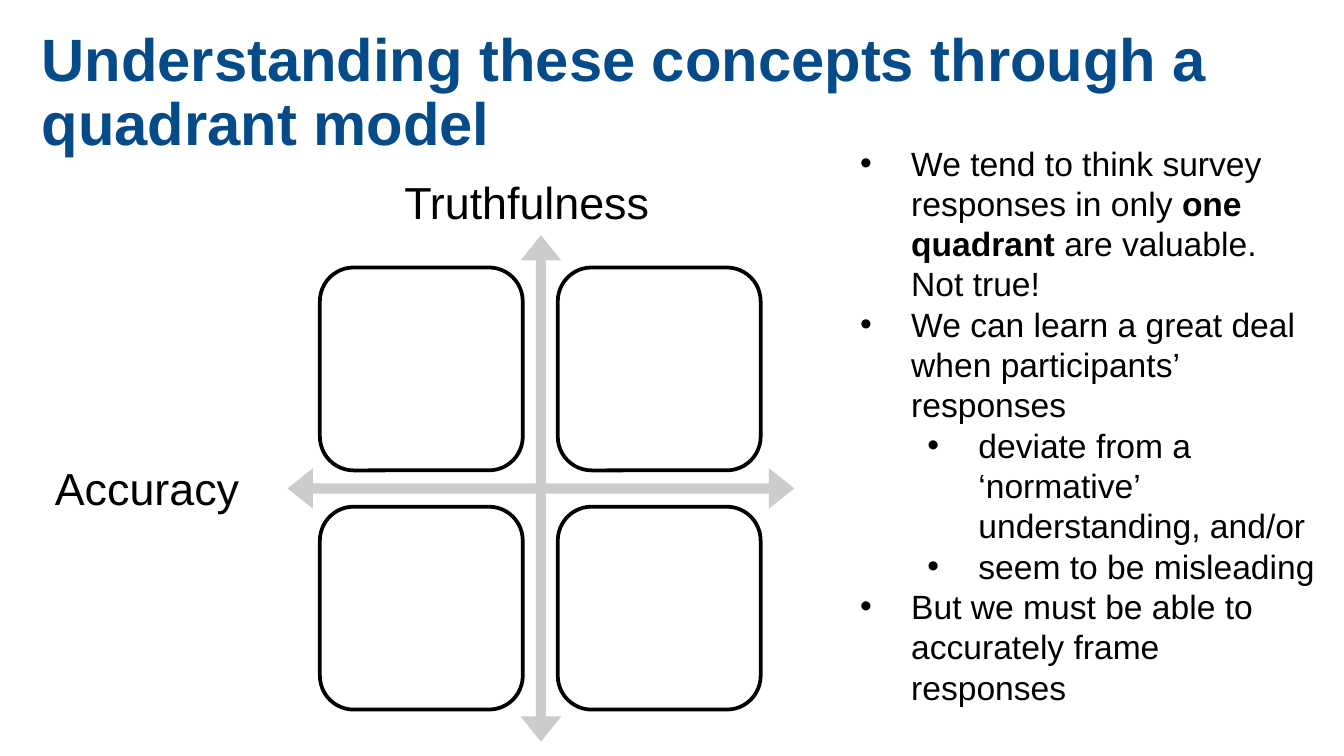
from lxml import etree
from pptx import Presentation
from pptx.dml.color import RGBColor
from pptx.enum.shapes import MSO_SHAPE
from pptx.enum.text import MSO_ANCHOR, MSO_AUTO_SIZE, PP_ALIGN
from pptx.oxml.ns import qn
from pptx.util import Inches, Pt

QUAD_ARROW = MSO_SHAPE.QUAD_ARROW
ROUNDED = MSO_SHAPE.ROUNDED_RECTANGLE
TOP, LEFT = MSO_ANCHOR.TOP, PP_ALIGN.LEFT
NO_FIT, GROW = MSO_AUTO_SIZE.NONE, MSO_AUTO_SIZE.SHAPE_TO_FIT_TEXT

NAVY = RGBColor(0x05, 0x4A, 0x89)
BLACK = RGBColor(0, 0, 0)
WHITE = RGBColor(0xFF, 0xFF, 0xFF)
GREY = RGBColor(0xCC, 0xCC, 0xCC)

TITLE = "Understanding these concepts through a quadrant model"
# Each bullet is a level and its runs of (text, bold).
BULLETS = [
    (0, [("We tend to think survey responses in only ", False),
         ("one quadrant ", True),
         ("are valuable. Not true!", False)]),
    (0, [("We can learn a great deal when participants’ responses", False)]),
    (1, [("deviate from a ‘normative’ understanding, and/or", False)]),
    (1, [("seem to be misleading", False)]),
    (0, [("But we must be able to accurately frame responses", False)]),
]
AXIS_LABELS = [("Accuracy", 0.31, 3.38, 1.59), ("Truthfulness", 2.91, 1.25, 2.04)]


def place(shape, left, top, width, height):
    box = {"left": left, "top": top, "width": width, "height": height}
    for name, value in box.items():
        setattr(shape, name, Inches(value))


def format_frame(tf, wrap, fit):
    for name, value in {"word_wrap": wrap, "auto_size": fit,
                        "vertical_anchor": TOP}.items():
        setattr(tf, name, value)


def add_run(p, text, size, color=BLACK, bold=False):
    r = p.add_run()
    r.text = text
    for name, value in {"name": "Arial", "size": Pt(size), "bold": bold}.items():
        setattr(r.font, name, value)
    r.font.color.rgb = color


def set_bullet(p, level):
    p.level = level
    p.alignment = LEFT
    p.space_before = Pt(0)
    pPr = p._p.get_or_add_pPr()
    pPr.set("marL", str(Inches(0.38 + 0.5 * level)))
    pPr.set("indent", str(Inches(-0.38)))
    etree.SubElement(pPr, qn("a:buFont")).set("typeface", "Arial")
    etree.SubElement(pPr, qn("a:buChar")).set("char", "•")


def fill_title(title):
    place(title, 0.21, 0.17, 9.07, 0.71)
    tf = title.text_frame
    format_frame(tf, True, NO_FIT)
    p = tf.paragraphs[0]
    p.alignment = LEFT
    p.line_spacing = 0.9
    add_run(p, TITLE, 32, NAVY, True)


def fill_bullets(body):
    place(body, 6.3, 1.01, 3.59, 4.34)
    tf = body.text_frame
    format_frame(tf, True, GROW)
    for i, (level, runs) in enumerate(BULLETS):
        p = tf.add_paragraph() if i else tf.paragraphs[0]
        set_bullet(p, level)
        for text, bold in runs:
            add_run(p, text, 18, bold=bold)


def add_shape(shapes, kind, left, top, size, fill):
    sp = shapes.add_shape(kind, *map(Inches, (left, top, size, size)))
    sp.shadow.inherit = False
    sp.fill.solid()
    sp.fill.fore_color.rgb = fill
    return sp


def add_quadrants(s):
    """Group the four-way arrow with its two-by-two grid of boxes."""
    shapes = s.shapes.add_group_shape().shapes
    arrow = add_shape(shapes, QUAD_ARROW, 2.14, 1.75, 3.77, GREY)
    arrow.line.fill.background()
    for i, value in enumerate((0.02, 0.04, 0.05)):
        arrow.adjustments[i] = value
    for row in range(2):
        for col in range(2):
            box = add_shape(shapes, ROUNDED, 2.38 + 1.77 * col,
                            1.99 + 1.78 * row, 1.51, WHITE)
            box.line.color.rgb = BLACK
            box.line.width = Pt(2)


def add_label(s, text, left, top, width):
    tb = s.shapes.add_textbox(*map(Inches, (left, top, width, 0.5)))
    format_frame(tb.text_frame, False, GROW)
    add_run(tb.text_frame.paragraphs[0], text, 24)


def main():
    prs = Presentation()
    prs.slide_width = Inches(10)
    prs.slide_height = prs.slide_width * 9 // 16
    s = prs.slides.add_slide(prs.slide_layouts[1])
    fill_title(s.shapes.title)
    add_quadrants(s)
    for label in AXIS_LABELS:
        add_label(s, *label)
    fill_bullets(s.placeholders[1])
    prs.save("out.pptx")


if __name__ == "__main__":
    main()
